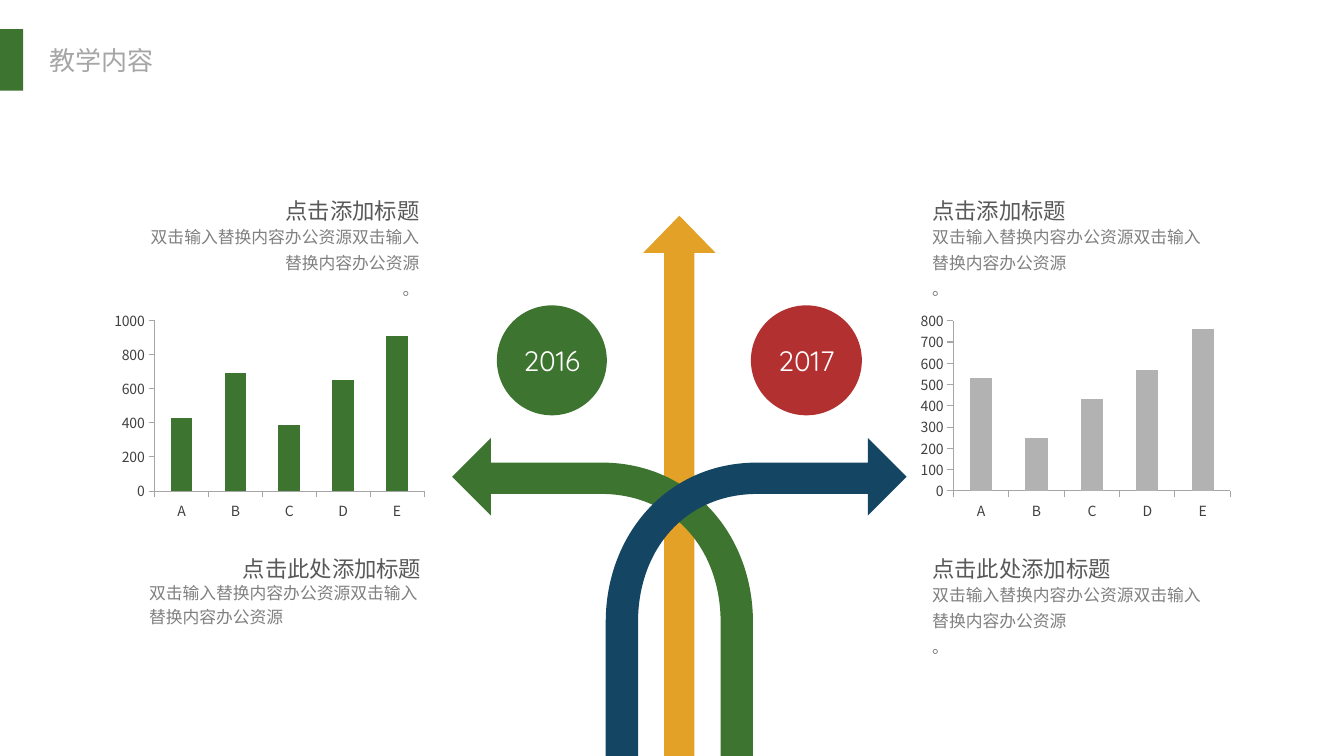
from lxml.etree import SubElement
from pptx import Presentation
from pptx.chart.data import CategoryChartData
from pptx.dml.color import RGBColor
from pptx.enum.chart import XL_CHART_TYPE, XL_TICK_MARK
from pptx.enum.shapes import MSO_SHAPE
from pptx.enum.text import MSO_ANCHOR, MSO_AUTO_SIZE, PP_ALIGN
from pptx.oxml.ns import qn
from pptx.util import Inches, Pt

COLORS = {
    "green": "3D7430", "gold": "E4A128", "red": "B23030", "navy": "144664",
    "silver": "B2B2B2", "pale": "A6A6A6", "body": "808080",
    "head": "595959", "label": "404040", "white": "FFFFFF",
}
SANS = "Noto Sans CJK SC"
BODY = "双击输入替换内容办公资源双击输入替换内容办公资源"
MID = 6.74


def color(name):
    return RGBColor.from_string(COLORS[name])


def put_text(shape, lines, size, tint, font=SANS, align=PP_ALIGN.LEFT,
             space=1.0, side=0.1, pad=0.05, wrap=True, grow=True,
             anchor=MSO_ANCHOR.TOP):
    frame = shape.text_frame
    frame.word_wrap = wrap
    frame.auto_size = MSO_AUTO_SIZE.SHAPE_TO_FIT_TEXT if grow else MSO_AUTO_SIZE.NONE
    frame.vertical_anchor = anchor
    frame.margin_left = frame.margin_right = Inches(side)
    frame.margin_top = frame.margin_bottom = Inches(pad)
    for index, line in enumerate(lines):
        para = frame.add_paragraph() if index else frame.paragraphs[0]
        para.alignment = align
        para.line_spacing = space
        run = para.add_run()
        run.text = line
        run.font.size = Pt(size)
        run.font.name = font
        run.font.color.rgb = color(tint)
        SubElement(run.font._element, qn("a:ea")).set("typeface", font)


def add_box(slide, place, lines, size, tint, **style):
    box = slide.shapes.add_textbox(*map(Inches, place))
    put_text(box, lines, size, tint, **style)


def paint(shape, tint, edge=True):
    shape.shadow.inherit = False
    shape.fill.solid()
    shape.fill.fore_color.rgb = color(tint)
    if edge:
        shape.line.color.rgb = color(tint)
        shape.line.width = Pt(1.5)
    else:
        shape.line.fill.background()


def add_form(slide, kind, place, tint, edge=True):
    shape = slide.shapes.add_shape(kind, *map(Inches, place))
    paint(shape, tint, edge)
    return shape


def add_shape(slide, points, tint, edge=True):
    spots = [(Inches(x), Inches(y)) for x, y in points]
    form = slide.shapes.build_freeform(*spots[0])
    form.add_line_segments(spots[1:])
    shape = form.convert_to_shape()
    paint(shape, tint, edge)
    return shape


def bend_lines(shape, starts):
    lines = list(shape._element.iter(qn("a:lnTo")))
    for start in starts:
        trio = lines[start:start + 3]
        curve = trio[0].makeelement(qn("a:cubicBezTo"))
        trio[0].addprevious(curve)
        for line in trio:
            curve.append(line[0])
            line.getparent().remove(line)


def add_bend(slide, tint, flip=False):
    points = [
        (5.97, 4.6), (4.86, 4.6), (4.86, 4.37), (4.5, 4.73), (4.86, 5.09),
        (4.86, 4.89), (5.96, 4.89), (6.71, 4.89), (7.16, 5.47), (7.16, 6.17),
        (7.16, 7.5), (7.46, 7.5), (7.46, 6.17), (7.46, 5.32), (6.86, 4.6),
        (5.97, 4.6),
    ]
    if flip:
        points = [(2 * MID - x, y) for x, y in points]
    arrow = add_shape(slide, points, tint)
    bend_lines(arrow, (6, 12))
    edge = arrow._element.spPr.find(qn("a:ln"))
    SubElement(edge, qn("a:miter")).set("lim", "800000")


def add_bars(slide, left, values, tint, top, step, width):
    data = CategoryChartData()
    data.categories = list("ABCDE")
    data.add_series("Series 1", values)
    place = map(Inches, (left, 3.04, 3.2, 2.17))
    chart = slide.shapes.add_chart(XL_CHART_TYPE.COLUMN_STACKED, *place, data).chart
    chart.has_legend = False
    chart.has_title = False
    chart.font.name = "Calibri"
    chart.font.size = Pt(18)
    plot = chart.plots[0]
    plot.gap_width = 150
    plot.overlap = 100
    plot.vary_by_categories = False
    bars = plot.series[0].format.fill
    bars.solid()
    bars.fore_color.rgb = color(tint)
    chart.value_axis.minimum_scale = 0
    chart.value_axis.maximum_scale = top
    chart.value_axis.major_unit = step
    for axis in (chart.category_axis, chart.value_axis):
        axis.has_major_gridlines = False
        axis.major_tick_mark = XL_TICK_MARK.OUTSIDE
        axis.minor_tick_mark = XL_TICK_MARK.NONE
        axis.format.line.color.rgb = color("pale")
        axis.format.line.width = Pt(width)
        font = axis.tick_labels.font
        font.name = SANS
        font.size = Pt(10)
        font.color.rgb = color("label")


def add_note(slide, head, place, align, left, lines, space=1.3, side=PP_ALIGN.LEFT):
    x, y, width = place
    add_box(slide, (left, y + 0.32, 2.88, 0.89 if len(lines) > 1 else 0.59),
            lines, 12, "body", align=side, space=space)
    add_box(slide, (x, y, width, 0.4), [head], 16, "head",
            align=align, space=1.5, pad=0)


def main():
    deck = Presentation()
    deck.slide_width, deck.slide_height = Inches(40 / 3), Inches(7.5)
    slide = deck.slides.add_slide(deck.slide_layouts[6])

    add_box(slide, (0.39, 0.39, 1.25, 0.41), ["教学内容"], 18.6, "pale",
            font="Arial", wrap=False)
    add_form(slide, MSO_SHAPE.RECTANGLE, (0, 0.29, 0.23, 0.61), "green", edge=False)

    half = [(0.15, 7.5), (0.15, 2.51), (0.36, 2.51)]
    stem = [(MID - x, y) for x, y in half] + [(MID, 2.14)]
    stem += [(MID + x, y) for x, y in reversed(half)]
    add_shape(slide, stem, "gold", edge=False)
    add_bend(slide, "green")

    for left, width, year, tint in ((4.94, 1.07, "2016", "green"),
                                    (7.46, 1.08, "2017", "red")):
        disc = add_form(slide, MSO_SHAPE.OVAL, (left, 3.04, width, 1.07), tint)
        put_text(disc, [year], 20, "white", font="Quicksand", align=PP_ALIGN.CENTER,
                 side=0, grow=False, anchor=MSO_ANCHOR.MIDDLE)

    upper, lower = "点击添加标题", "点击此处添加标题"
    right = PP_ALIGN.RIGHT
    add_note(slide, lower, (2.25, 5.37, 2.03), right, 1.38, [BODY], space=1.2)
    add_note(slide, upper, (2.48, 1.82, 1.78), right, 1.38, [BODY, "。"], side=right)
    add_bars(slide, 1.07, (430, 690, 390, 650, 910), "green", 1000, 200, 0.5)

    for head, top, width in ((lower, 5.37, 2.03), (upper, 1.82, 1.78)):
        add_note(slide, head, (9.15, top, width), PP_ALIGN.LEFT, 9.15, [BODY, "。"])
    add_bars(slide, 9.07, (530, 250, 430, 570, 760), "silver", 800, 100, 0.75)
    add_bend(slide, "navy", flip=True)
    deck.save("out.pptx")


if __name__ == "__main__":
    main()
